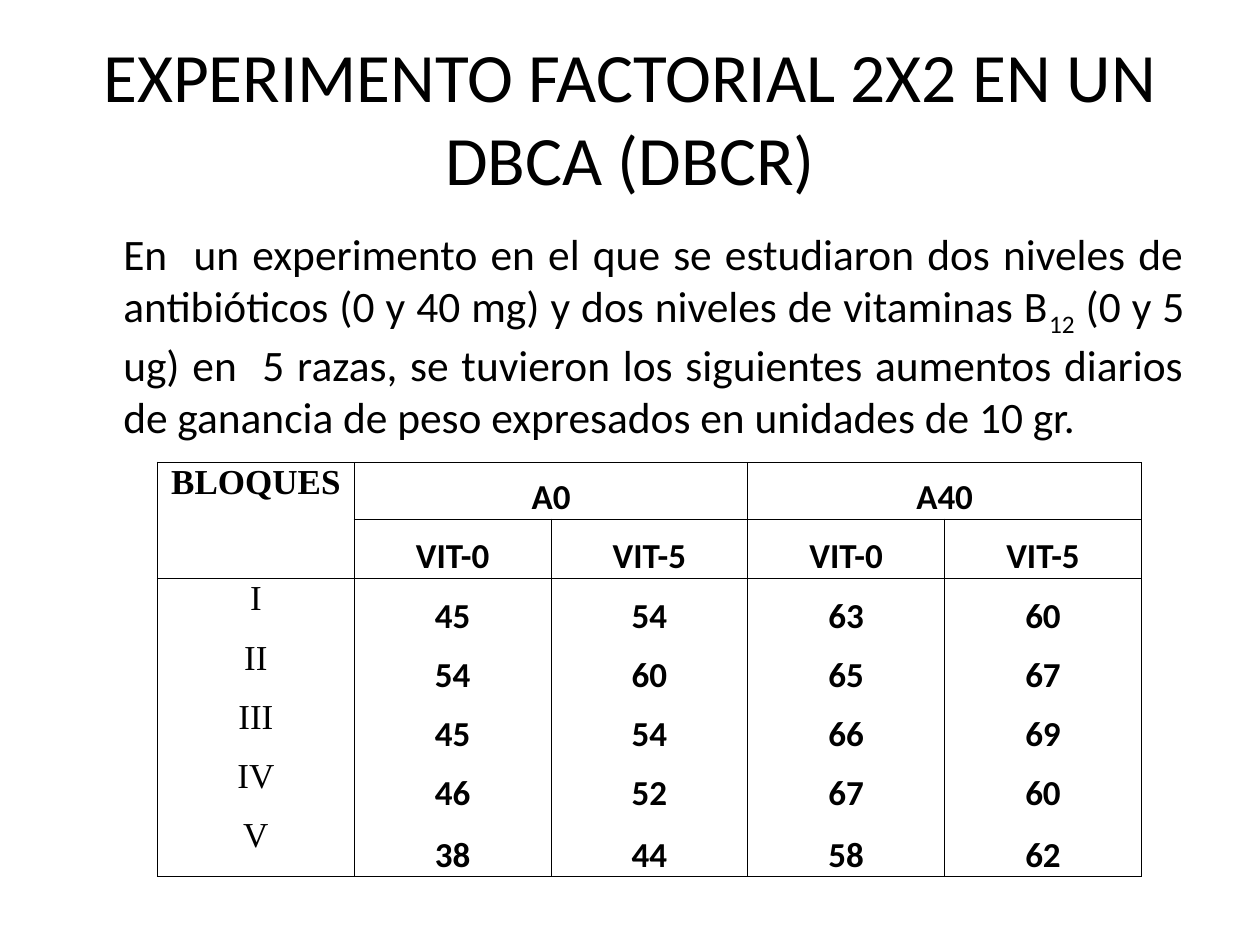
from lxml.etree import SubElement
from pptx import Presentation
from pptx.dml.color import RGBColor
from pptx.enum.text import MSO_ANCHOR, MSO_AUTO_SIZE, PP_ALIGN
from pptx.oxml.ns import qn
from pptx.util import Inches, Pt

COLORS = {"ink": "000000", "paper": "FFFFFF"}
SANS, SERIF = "Calibri", "Times New Roman"

TITLE = "EXPERIMENTO FACTORIAL 2X2 EN UN DBCA (DBCR)"
STATEMENT = [
    ("En  un experimento en el que se estudiaron dos niveles de antibióticos "
     "(0 y 40 mg) y dos niveles de vitaminas B", False),
    ("12", True),
    (" (0 y 5 ug) en  5 razas, se tuvieron los siguientes aumentos diarios "
     "de ganancia de peso expresados en unidades de 10 gr.", False),
]
ROWS = [
    ["BLOQUES", "A0", "", "A40", ""],
    ["", "VIT-0", "VIT-5", "VIT-0", "VIT-5"],
    ["I", "45", "54", "63", "60"],
    ["II", "54", "60", "65", "67"],
    ["III", "45", "54", "66", "69"],
    ["IV", "46", "52", "67", "60"],
    ["V", "38", "44", "58", "62"],
]
HEADER_ROWS = 2
ROW_HEIGHTS = [0.45] + [0.47] * 5 + [0.49]


def add_run(p, text, size, font=SANS, bold=False):
    r = p.add_run()
    r.text = text
    r.font.size = Pt(size)
    r.font.name = font
    r.font.bold = bold
    r.font.color.rgb = RGBColor.from_string(COLORS["ink"])
    return r


def add_title(s, box):
    sp = s.shapes.title
    sp.left, sp.top, sp.width, sp.height = map(Inches, box)
    tf = sp.text_frame
    tf.word_wrap = True
    tf.auto_size = MSO_AUTO_SIZE.NONE
    tf.vertical_anchor = MSO_ANCHOR.MIDDLE
    p = tf.paragraphs[0]
    p.alignment = PP_ALIGN.CENTER
    add_run(p, TITLE, 39.6)


def add_statement(s, box):
    tf = s.shapes.add_textbox(*map(Inches, box)).text_frame
    tf.word_wrap = True
    p = tf.paragraphs[0]
    p.alignment = PP_ALIGN.JUSTIFY
    p.space_before = Pt(5)
    for text, subscript in STATEMENT:
        r = add_run(p, text, 24.8)
        if subscript:
            r.font._element.set("baseline", "-25000")


def set_borders(cell, sides, width):
    """Draw the given sides (letters of LRTB) and blank the others."""
    tc_pr = cell._tc.get_or_add_tcPr()
    for side in "LRTB":
        ln = SubElement(tc_pr, qn(f"a:ln{side}"), w=str(Pt(width)))
        if side in sides:
            fill = SubElement(ln, qn("a:solidFill"))
            SubElement(fill, qn("a:srgbClr"), val=COLORS["ink"])
        else:
            SubElement(ln, qn("a:noFill"))


def format_cell(cell, text, row, col):
    cell.margin_left = cell.margin_right = cell.margin_top = Inches(0.01)
    cell.margin_bottom = 0
    cell.vertical_anchor = MSO_ANCHOR.BOTTOM if col else MSO_ANCHOR.TOP
    sides = "LR"
    if row <= HEADER_ROWS:
        sides += "T"
    if row < HEADER_ROWS or row == len(ROWS) - 1:
        sides += "B"
    set_borders(cell, sides, 0.5 if col else 1)
    cell.fill.background()
    p = cell.text_frame.paragraphs[0]
    p.alignment = PP_ALIGN.CENTER
    if text:
        add_run(p, text, 20, SANS if col else SERIF,
                bold=col > 0 or row < HEADER_ROWS)


def add_data_table(s, box):
    table = s.shapes.add_table(len(ROWS), len(ROWS[0]), *map(Inches, box)).table
    table.first_row = table.horz_banding = False
    for column in table.columns:
        column.width = Inches(box[2] / len(ROWS[0]))
    for row, height in zip(table.rows, ROW_HEIGHTS):
        row.height = Inches(height)
    for i, texts in enumerate(ROWS):
        for j, text in enumerate(texts):
            format_cell(table.cell(i, j), text, i, j)
    table.cell(0, 0).merge(table.cell(1, 0))
    for j in (1, 3):
        table.cell(0, j).merge(table.cell(0, j + 1))


def main():
    prs = Presentation()
    prs.slide_width, prs.slide_height = Inches(10), Inches(7.5)
    s = prs.slides.add_slide(prs.slide_layouts[5])
    s.background.fill.solid()
    s.background.fill.fore_color.rgb = RGBColor.from_string(COLORS["paper"])
    add_title(s, (0.5, 0.3, 9, 1.25))
    add_statement(s, (0.88, 1.75, 8.62, 1.77))
    add_data_table(s, (1.25, 3.67, 7.81, sum(ROW_HEIGHTS)))
    prs.save("out.pptx")


if __name__ == "__main__":
    main()
